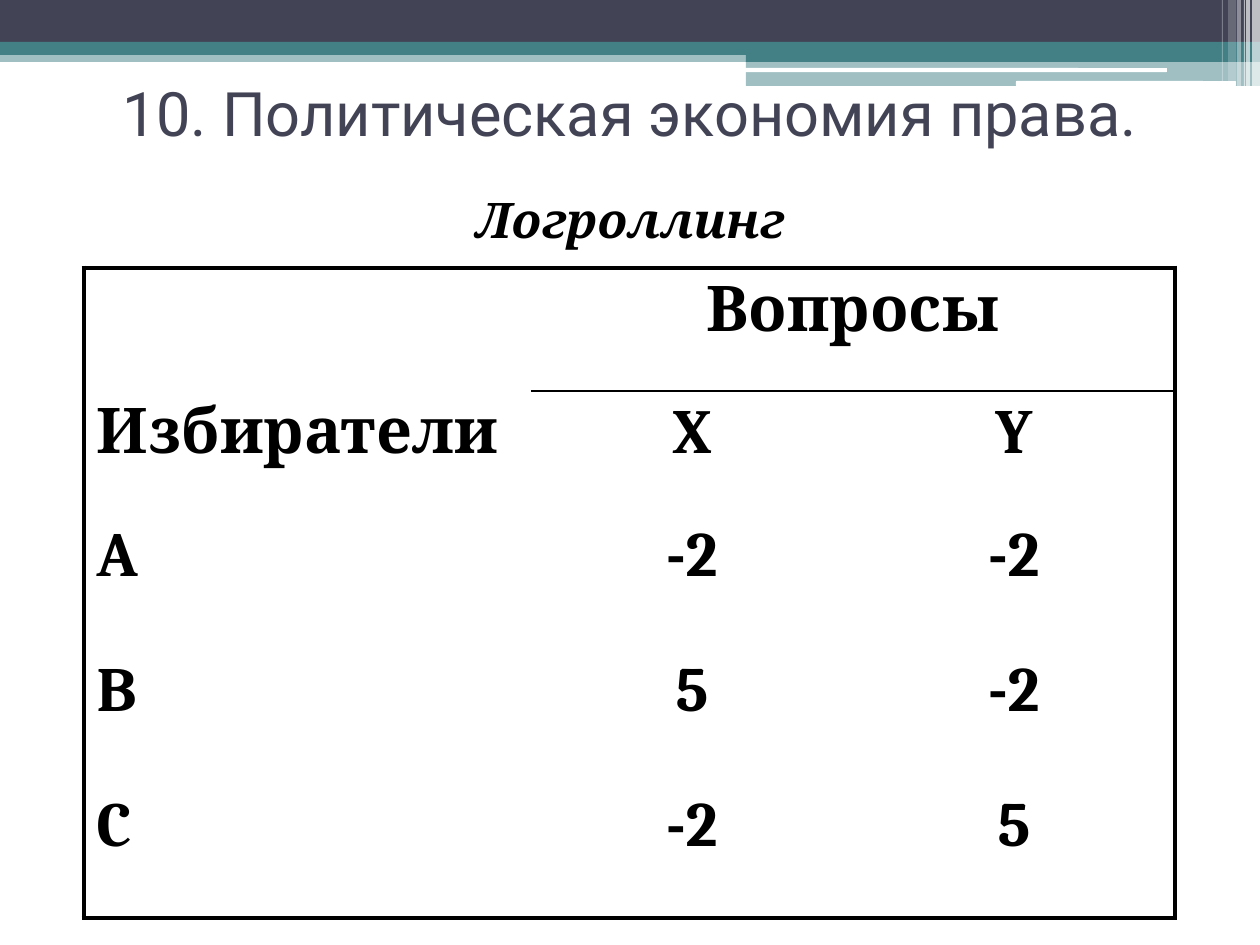
"""Build the logrolling slide: a banded header, a title and a voters table."""
import pptx
import pptx.dml.color
import pptx.enum.shapes
import pptx.enum.text
import pptx.oxml
import pptx.oxml.ns
import pptx.util

SCALE = 914400 / 126
SHAPE = pptx.enum.shapes.MSO_SHAPE
ALIGN = pptx.enum.text.PP_ALIGN
ANCHOR = pptx.enum.text.MSO_ANCHOR
DARK, TEAL, WHITE, BLACK = "424456", "438086", "FFFFFF", "000000"

BANDS = [
    (0, 50, 1260, 12, TEAL, 50),
    (0, 0, 1260, 42, DARK, 100),
    (0, 42, 1260, 13, TEAL, 100),
    (746, 49, 514, 13, TEAL, 100),
    (746, 61, 514, 25, TEAL, 50),
]
PILLS = [(745, 68, 422, 4), (1016, 81, 220, 5)]
STRIPES = [
    (1252, 8, 86, 65), (1246, 4, 86, 65), (1244, 1, 86, 60),
    (1237, 4, 86, 40), (1228, 8, 81, 20), (1222, 1, 81, 30),
]
TITLE = "10. Политическая экономия права."
SUBTITLE = "Логроллинг"
ROWS = [
    ("", "Вопросы", ""),
    ("Избиратели", "X", "Y"),
    ("A", "-2", "-2"),
    ("B", "5", "-2"),
    ("C", "-2", "5"),
]
TABLE_LEFT, TABLE_TOP = 84, 268
COLUMN_WIDTHS = [447, 322, 322]
ROW_HEIGHTS = [123, 123, 135, 135, 134]


def px(value):
    return pptx.util.Emu(round(value * SCALE))


def color(value):
    return pptx.dml.color.RGBColor.from_string(value)


def add_bar(page, kind, left, top, width, height, fill, opacity=100):
    bar = page.shapes.add_shape(kind, px(left), px(top), px(width), px(height))
    bar.shadow.inherit = False
    bar.fill.solid()
    bar.fill.fore_color.rgb = color(fill)
    bar.line.fill.background()
    if opacity < 100:
        tone = bar.fill._xPr.find(".//" + pptx.oxml.ns.qn("a:srgbClr"))
        alpha = pptx.oxml.parse_xml(f'<a:alpha {pptx.oxml.ns.nsdecls("a")} val="{opacity * 1000}"/>')
        tone.append(alpha)


def write(para, text, size, font, fill, bold=False, italic=False, align=ALIGN.CENTER):
    para.alignment = align
    span = para.add_run()
    span.text = text
    span.font.size = pptx.util.Pt(size)
    span.font.name = font
    span.font.color.rgb = color(fill)
    span.font.bold = bold
    span.font.italic = italic


def add_box(page, left, top, width, height, anchor):
    box = page.shapes.add_textbox(px(left), px(top), px(width), px(height))
    box.text_frame.word_wrap = True
    box.text_frame.vertical_anchor = anchor
    return box


def set_borders(cell, widths):
    properties = cell._tc.get_or_add_tcPr()
    for index, (side, width) in enumerate(zip("LRTB", widths)):
        paint = f'<a:solidFill><a:srgbClr val="{BLACK}"/></a:solidFill>' if width else "<a:noFill/>"
        line = pptx.oxml.parse_xml(
            f'<a:ln{side} {pptx.oxml.ns.nsdecls("a")} w="{width * 12700}">{paint}</a:ln{side}>')
        properties.insert(index, line)


def add_votes(page):
    frame = page.shapes.add_table(len(ROWS), len(COLUMN_WIDTHS), px(TABLE_LEFT), px(TABLE_TOP),
                                  px(sum(COLUMN_WIDTHS)), px(sum(ROW_HEIGHTS)))
    table = frame.table
    table.first_row = table.horz_banding = False
    for column, width in zip(table.columns, COLUMN_WIDTHS):
        column.width = px(width)
    for row, height in zip(table.rows, ROW_HEIGHTS):
        row.height = px(height)
    table.cell(0, 1).merge(table.cell(0, 2))
    last_row, last_column = len(ROWS) - 1, len(COLUMN_WIDTHS) - 1
    for r, texts in enumerate(ROWS):
        for c, text in enumerate(texts):
            cell = table.cell(r, c)
            cell.fill.background()
            left = 3 if c == 0 else 0
            right = 3 if c == last_column or (r, c) == (0, 1) else 0
            top = 3 if r == 0 else int(r == 1 and c > 0)
            bottom = 3 if r == last_row else int(r == 0 and c > 0)
            set_borders(cell, (left, right, top, bottom))
            if text:
                para = cell.text_frame.paragraphs[0]
                para.space_before = pptx.util.Pt(7.2)
                write(para, text, 36, "Cambria", BLACK, bold=True,
                      align=ALIGN.CENTER if c else ALIGN.LEFT)


def main():
    deck = pptx.Presentation()
    deck.slide_width, deck.slide_height = px(1260), px(945)
    page = deck.slides.add_slide(deck.slide_layouts[6])
    for band in BANDS:
        add_bar(page, SHAPE.RECTANGLE, *band)
    for pill in PILLS:
        add_bar(page, SHAPE.ROUNDED_RECTANGLE, *pill, WHITE)
    for left, width, height, opacity in STRIPES:
        add_bar(page, SHAPE.RECTANGLE, left, 0, width, height, WHITE, opacity)

    body = add_box(page, 32, 195, 1197, 698, ANCHOR.TOP)
    body.fill.solid()
    body.fill.fore_color.rgb = color(WHITE)
    para = body.text_frame.paragraphs[0]
    para.line_spacing = 0.8
    para.space_before = pptx.util.Pt(3)
    write(para, SUBTITLE, 28, "Cambria", BLACK, bold=True, italic=True)

    add_votes(page)
    title = add_box(page, 0, 59, 1260, 106, ANCHOR.MIDDLE)
    write(title.text_frame.paragraphs[0], TITLE, 35, "Roboto", DARK)
    deck.save("out.pptx")


if __name__ == "__main__":
    main()
